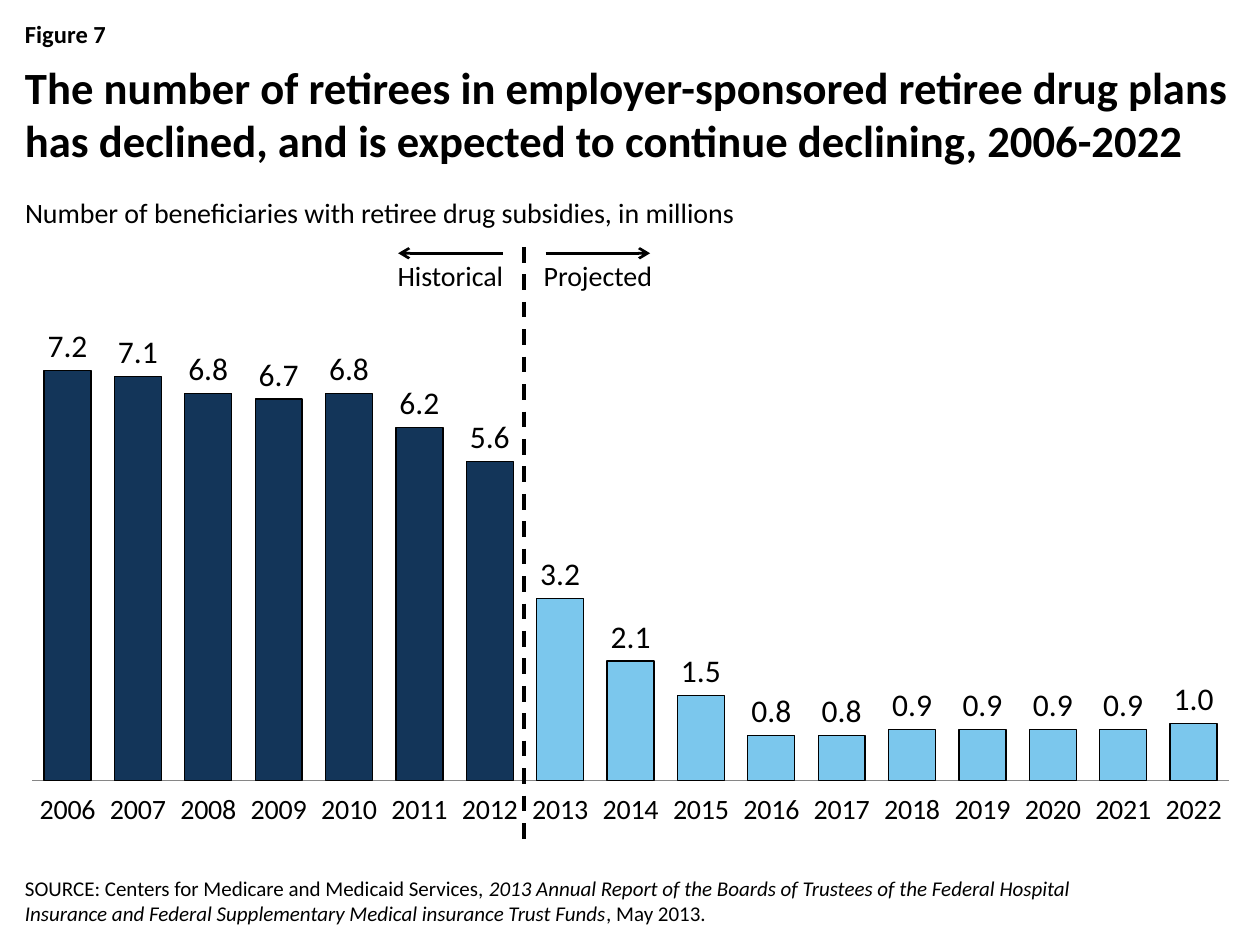
from lxml import etree
from pptx import Presentation
from pptx.chart.data import CategoryChartData
from pptx.dml.color import RGBColor
from pptx.enum.chart import XL_CHART_TYPE as ChartType, XL_LABEL_POSITION as LabelPosition
from pptx.enum.chart import XL_TICK_LABEL_POSITION as TickLabels, XL_TICK_MARK as TickMark
from pptx.enum.dml import MSO_LINE_DASH_STYLE as Dash
from pptx.enum.shapes import MSO_CONNECTOR as Connector
from pptx.enum.text import MSO_ANCHOR as Anchor, PP_ALIGN as Align
from pptx.oxml import parse_xml
from pptx.oxml.ns import nsdecls, qn
from pptx.util import Inches, Pt

FONT = "Calibri"
BLACK, NAVY, SKY, GREY = "000000", "133559", "7BC7ED", "868686"
WIDTH, HEIGHT = 10, 7.5
LEFT, CONTENT_WIDTH = 0.1, 9.8
DIVIDER_X, PERIOD_TOP, PERIOD_WIDTH = 4.16, 2.01, 1.17

FIRST_YEAR, FIRST_PROJECTED = 2006, 2013
BENEFICIARIES = [7.2, 7.1, 6.8, 6.7, 6.8, 6.2, 5.6, 3.2, 2.1,
                 1.5, 0.8, 0.8, 0.9, 0.9, 0.9, 0.9, 1.0]
# Inner plot area as shares of the chart frame
PLOT_AREA = {"x": 0.016, "y": 0.147, "w": 0.969, "h": 0.749}


def color(hex_code):
    return RGBColor.from_string(hex_code)


def set_font(font, size, bold=False, italic=False):
    font.name, font.size = FONT, Pt(size)
    font.bold, font.italic = bold, italic
    font.color.rgb = color(BLACK)


def add_text(slide, box, size, pieces, bold=False, anchor=Anchor.TOP):
    """Add one paragraph made of (text, italic) pieces."""
    frame = slide.shapes.add_textbox(*map(Inches, box)).text_frame
    frame.word_wrap = True
    frame.vertical_anchor = anchor
    for text, italic in pieces:
        run = frame.paragraphs[0].add_run()
        run.text = text
        set_font(run.font, size, bold, italic)


def add_line(slide, start, end, width, dash=None, arrow=False):
    line = slide.shapes.add_connector(Connector.STRAIGHT, *map(Inches, start + end))
    line.line.color.rgb = color(BLACK)
    line.line.width = Pt(width)
    if dash:
        line.line.dash_style = dash
    if arrow:
        outline = line.line._get_or_add_ln()
        etree.SubElement(outline, qn("a:tailEnd"), type="arrow")
    etree.SubElement(line._element.spPr, qn("a:effectLst"))


def set_plot_area(chart):
    settings = [("layoutTarget", "inner"), ("xMode", "edge"), ("yMode", "edge")]
    settings += PLOT_AREA.items()
    entries = "".join(f'<c:{tag} val="{value}"/>' for tag, value in settings)
    layout = parse_xml(f'<c:layout {nsdecls("c")}><c:manualLayout>{entries}'
                       '</c:manualLayout></c:layout>')
    plot_area = chart._chartSpace.chart.plotArea
    for old in plot_area.findall(qn("c:layout")):
        plot_area.remove(old)
    plot_area.insert(0, layout)


def style_bar(bar_format, fill):
    bar_format.fill.solid()
    bar_format.fill.fore_color.rgb = color(fill)
    bar_format.line.color.rgb = color(BLACK)
    bar_format.line.width = Pt(0.75)


def add_beneficiary_chart(slide):
    data = CategoryChartData(number_format="0.0")
    data.categories = [str(FIRST_YEAR + i) for i in range(len(BENEFICIARIES))]
    data.add_series("Series 1", BENEFICIARIES)
    box = map(Inches, (LEFT, 1.87, CONTENT_WIDTH, 4.83))
    chart = slide.shapes.add_chart(ChartType.COLUMN_CLUSTERED, *box, data).chart
    chart.has_legend = chart.has_title = False
    set_font(chart.font, 18)
    set_plot_area(chart)

    # Axes
    years, millions = chart.category_axis, chart.value_axis
    years.major_tick_mark = years.minor_tick_mark = TickMark.NONE
    years.tick_label_position = TickLabels.LOW
    years.format.line.color.rgb = color(GREY)
    set_font(years.tick_labels.font, 16)
    millions.minimum_scale, millions.maximum_scale = 0, 8
    millions.has_major_gridlines = False
    millions.visible = False

    # Bars: historical years dark, projected years light
    plot = chart.plots[0]
    plot.gap_width = 50
    plot.vary_by_categories = False
    bars = plot.series[0]
    style_bar(bars.format, NAVY)
    for i in range(FIRST_PROJECTED - FIRST_YEAR, len(BENEFICIARIES)):
        style_bar(bars.points[i].format, SKY)

    # Value labels
    labels = bars.data_labels
    labels.show_value = True
    labels.number_format, labels.number_format_is_linked = "0.0", False
    labels.position = LabelPosition.OUTSIDE_END
    set_font(labels.font, 18)


def add_period_table(slide, periods):
    box = (DIVIDER_X - PERIOD_WIDTH, PERIOD_TOP, 2 * PERIOD_WIDTH, 0.41)
    table = slide.shapes.add_table(1, len(periods), *map(Inches, box)).table
    table.first_row = table.horz_banding = False
    for cell, period in zip(table.iter_cells(), periods):
        cell.text = period
        cell.fill.background()
        paragraph = cell.text_frame.paragraphs[0]
        paragraph.alignment = Align.CENTER
        set_font(paragraph.runs[0].font, 16)
        # Borders come before the fill in the cell properties
        for position, side in enumerate(("lnL", "lnR", "lnT", "lnB")):
            border = parse_xml(f'<a:{side} {nsdecls("a")}><a:noFill/></a:{side}>')
            cell._tc.get_or_add_tcPr().insert(position, border)


def main():
    prs = Presentation()
    prs.slide_width, prs.slide_height = Inches(WIDTH), Inches(HEIGHT)
    slide = prs.slides.add_slide(prs.slide_layouts[6])

    # Heading
    add_text(slide, (LEFT, 0.1, CONTENT_WIDTH, 0.34), 14, [("Figure 7", False)], bold=True)
    add_beneficiary_chart(slide)
    add_text(slide, (LEFT, 6.8, 9.1, 0.6), 12, [
        ("SOURCE: Centers for Medicare and Medicaid Services, ", False),
        ("2013 Annual Report of the Boards of Trustees of the Federal Hospital "
         "Insurance and Federal Supplementary Medical insurance Trust Funds", True),
        (", May 2013.", False)], anchor=Anchor.BOTTOM)
    add_text(slide, (LEFT, 0.4, WIDTH - LEFT, 1), 25.5, [
        ("The number of retirees in employer-sponsored retiree drug plans has declined, "
         "and is expected to continue declining, 2006-2022", False)],
        bold=True, anchor=Anchor.MIDDLE)
    add_text(slide, (LEFT, 1.5, 5.92, 0.37), 16, [
        ("Number of beneficiaries with retiree drug subsidies, in millions", False)])

    # Split between the historical and the projected years
    add_line(slide, (DIVIDER_X, 1.96), (DIVIDER_X, 6.66), 2.25, dash=Dash.DASH)
    add_period_table(slide, ["Historical", "Projected"])
    for direction in (1, -1):
        near, far = (DIVIDER_X + direction * gap for gap in (0.17, 1))
        add_line(slide, (near, PERIOD_TOP), (far, PERIOD_TOP), 1.5, arrow=True)

    prs.save("out.pptx")


if __name__ == "__main__":
    main()
